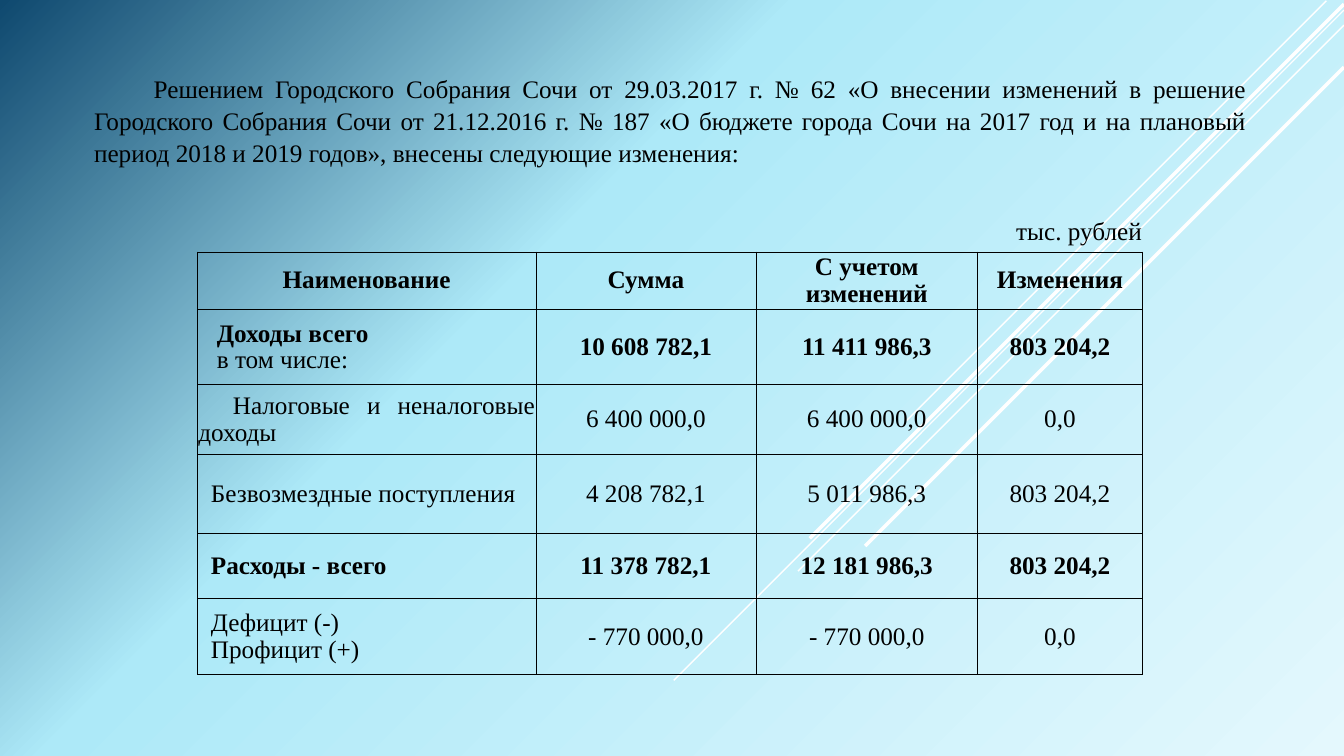
import pptx
import pptx.util
import pptx.dml.color
import pptx.enum.shapes
import pptx.enum.text
import pptx.oxml
import pptx.oxml.ns

Align = pptx.enum.text.PP_ALIGN
Anchor = pptx.enum.text.MSO_ANCHOR
NS = pptx.oxml.ns.nsdecls("a")
UNIT = pptx.util.Inches(13.333) / 160

LEAD = (
    "Решением Городского Собрания Сочи от 29.03.2017 г. № 62 «О внесении изменений "
    "в решение Городского Собрания Сочи от 21.12.2016 г. № 187 «О бюджете города Сочи "
    "на 2017 год и на плановый период 2018 и 2019 годов», внесены следующие изменения:"
)
HEADS = ["Наименование", "Сумма", "С учетом изменений", "Изменения"]
ITEMS = [
    ("Доходы всего\nв том числе:", ["10 608 782,1", "11 411 986,3", "803 204,2"], True, 2.2),
    ("Налоговые и неналоговые доходы", ["6 400 000,0", "6 400 000,0", "0,0"], False, 4.1),
    ("Безвозмездные поступления", ["4 208 782,1", "5 011 986,3", "803 204,2"], False, 1.5),
    ("Расходы - всего", ["11 378 782,1", "12 181 986,3", "803 204,2"], True, 1.5),
    ("Дефицит (-)\nПрофицит (+)", ["- 770 000,0", "- 770 000,0", "0,0"], False, 1.5),
]
COLS = [40.3, 26.2, 26.4, 19.6]
ROWS = [6.8, 9, 8.3, 9.4, 7.8, 9]
RAYS = [(157.9, 0.1, 50, 1), (160, 1.2, 79.8, 1), (160, 3, 65, 1),
        (160, 0.5, 63.6, 2.5), (160, 8, 57, 2.5)]
STOPS = [(0, "E4F8FD"), (62, "ADE9F8"), (100, "0F496F")]


def grid(*cells):
    return [round(cell * UNIT) for cell in cells]


def color(code):
    return pptx.dml.color.RGBColor.from_string(code)


class Page:
    font = "Times New Roman"
    size = 18
    ink = "000000"

    def __init__(self, deck):
        self.slide = deck.slides.add_slide(deck.slide_layouts[5])
        self.shapes = self.slide.shapes

    def back(self, stops):
        self.slide.background.fill.gradient()
        old = self.slide.element.find(".//" + pptx.oxml.ns.qn("a:gradFill"))
        marks = "".join(
            f'<a:gs pos="{pos * 1000}"><a:srgbClr val="{code}"/></a:gs>' for pos, code in stops)
        new = pptx.oxml.parse_xml(
            f'<a:gradFill {NS} rotWithShape="1"><a:gsLst>{marks}</a:gsLst>'
            '<a:path path="circle"><a:fillToRect l="100000" t="100000"/></a:path></a:gradFill>')
        old.getparent().replace(old, new)

    def ray(self, col, row, run, width):
        ends = grid(col, row, col - run, row + run)
        line = self.shapes.add_connector(pptx.enum.shapes.MSO_CONNECTOR.STRAIGHT, *ends)
        line.line.color.rgb = color("FFFFFF")
        line.line.width = pptx.util.Pt(width)
        line.element.spPr.append(pptx.oxml.parse_xml(f"<a:effectLst {NS}/>"))
        self.shapes.title.element.addprevious(line.element)

    def words(self, frame, text, align, bold=False, indent=0, space=1.0):
        frame.text = text
        frame.word_wrap = True
        for spot, para in enumerate(frame.paragraphs):
            para.alignment = align
            para.line_spacing = space
            para._p.get_or_add_pPr().set("indent", str(grid(indent)[0]))
            for run in para.runs:
                run.font.name = self.font
                run.font.size = pptx.util.Pt(self.size)
                run.font.bold = bold and spot == 0
                run.font.color.rgb = color(self.ink)

    def title(self, text, *box):
        shape = self.shapes.title
        shape.left, shape.top, shape.width, shape.height = grid(*box)
        frame = shape.text_frame
        frame.auto_size = pptx.enum.text.MSO_AUTO_SIZE.NONE
        frame.vertical_anchor = Anchor.TOP
        self.words(frame, text, Align.JUSTIFY, indent=7.1, space=1.05)

    def label(self, text, *box):
        shape = self.shapes.add_textbox(*grid(*box))
        self.words(shape.text_frame, text, Align.LEFT)

    def cell(self, cell, text, align, bold, indent=0):
        cell.margin_left = cell.margin_right = cell.margin_top = pptx.util.Inches(0.01)
        cell.margin_bottom = 0
        cell.vertical_anchor = Anchor.MIDDLE
        cell.fill.background()
        self.words(cell.text_frame, text, align, bold, indent, 0.95)
        props = cell._tc.get_or_add_tcPr()
        for spot, side in enumerate("LRTB"):
            props.insert(spot, pptx.oxml.parse_xml(
                f'<a:ln{side} {NS} w="6350"><a:solidFill><a:srgbClr val="{self.ink}"/>'
                f"</a:solidFill></a:ln{side}>"))

    def table(self, left, top, cols, rows, heads, items):
        box = grid(left, top, sum(cols), sum(rows))
        table = self.shapes.add_table(len(rows), len(cols), *box).table
        table.first_row = table.horz_banding = False
        for col, width in zip(table.columns, grid(*cols)):
            col.width = width
        for row, height in zip(table.rows, grid(*rows)):
            row.height = height
        for spot, head in enumerate(heads):
            self.cell(table.cell(0, spot), head, Align.CENTER, True)
        for line, (name, sums, bold, indent) in enumerate(items, 1):
            self.cell(table.cell(line, 0), name, Align.JUSTIFY, bold, indent)
            for spot, value in enumerate(sums, 1):
                self.cell(table.cell(line, spot), value, Align.CENTER, bold)


def main():
    deck = pptx.Presentation()
    deck.slide_width, deck.slide_height = grid(160, 90)
    page = Page(deck)
    page.back(STOPS)
    for ray in RAYS:
        page.ray(*ray)
    page.table(23.5, 30, COLS, ROWS, HEADS, ITEMS)
    page.label("тыс. рублей", 119.8, 25.1, 22.9, 4.8)
    page.title(LEAD, 10, 8, 139.6, 12.1)
    deck.save("out.pptx")


if __name__ == "__main__":
    main()
